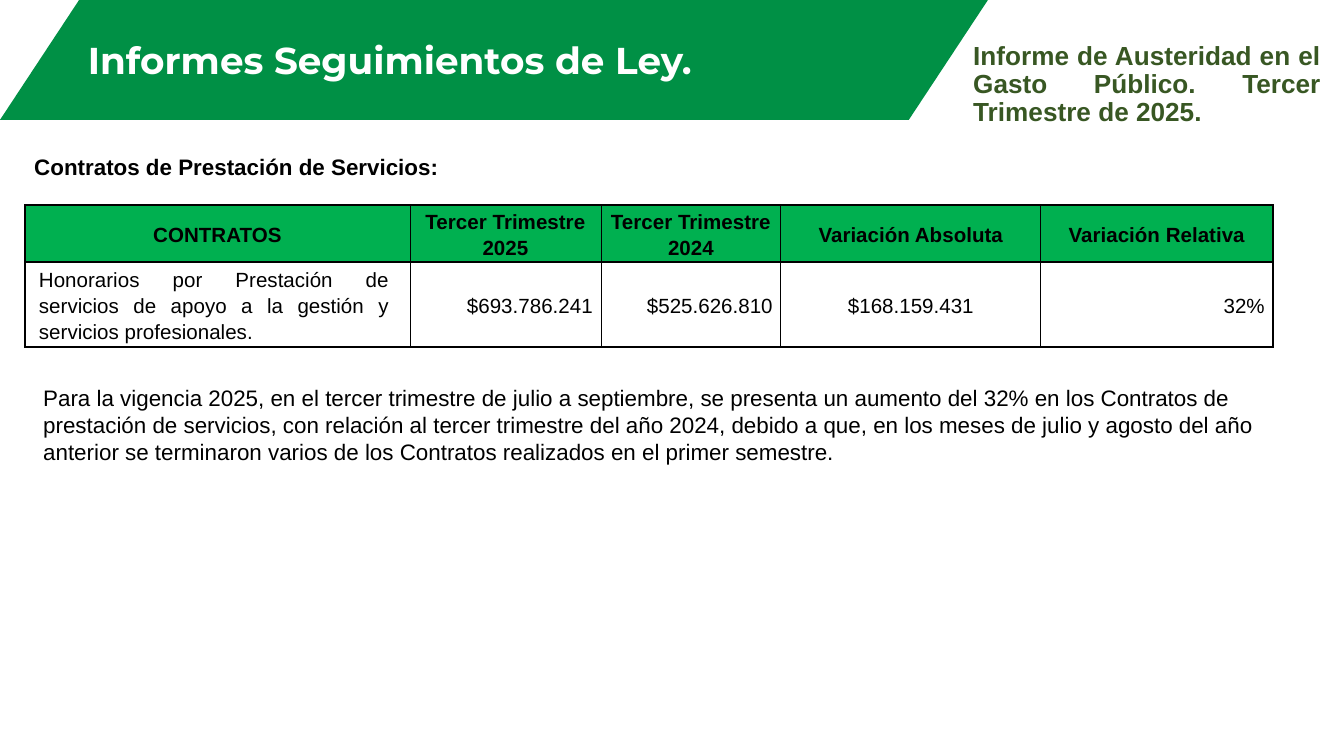
from lxml import etree
from pptx import Presentation
from pptx.dml.color import RGBColor
from pptx.enum.shapes import MSO_SHAPE
from pptx.enum.text import MSO_ANCHOR, PP_ALIGN
from pptx.oxml.ns import qn
from pptx.util import Emu, Pt

LEFT, CENTER, RIGHT, JUSTIFY = PP_ALIGN.LEFT, PP_ALIGN.CENTER, PP_ALIGN.RIGHT, PP_ALIGN.JUSTIFY
TOP, MIDDLE, BOTTOM = MSO_ANCHOR.TOP, MSO_ANCHOR.MIDDLE, MSO_ANCHOR.BOTTOM
PX = 914400 / 134.4


def px(*lengths):
    """Convert pixel lengths to a list of EMU lengths."""
    return [Emu(round(length * PX)) for length in lengths]


def write(frame, text, align, spacing, color, **font):
    """Put one formatted paragraph into a text frame."""
    frame.word_wrap = True
    para = frame.paragraphs[0]
    para.alignment, para.line_spacing = align, spacing
    span = para.add_run()
    span.text = text
    span.font.color.rgb = RGBColor.from_string(color)
    for name, value in font.items():
        setattr(span.font, name, value)


deck = Presentation()
deck.slide_width, deck.slide_height = px(1344, 756)
page = deck.slides.add_slide(deck.slide_layouts[5])

# Title on its green band
title = page.shapes.title
title.left, title.top, title.width, title.height = px(0, 31, 780, 58)
title.text_frame.vertical_anchor = BOTTOM
write(title.text_frame, "Informes Seguimientos de Ley.", CENTER, 0.9, "FFFFFF",
      name="Montserrat", size=Pt(20), bold=True)

band = page.shapes.add_shape(MSO_SHAPE.PARALLELOGRAM, *px(0, 0, 988, 120))
band.adjustments[0] = 0.66
band.shadow.inherit = False
band.fill.solid()
band.fill.fore_color.rgb = RGBColor.from_string("009045")
band.line.fill.background()
title.element.addprevious(band.element)

# Texts around the table
texts = [
    ((960, 36, 374, 100), "Informe de Austeridad en el Gasto Público. Tercer Trimestre de 2025.",
     JUSTIFY, 0.9, "385723", 14, True),
    ((21, 147, 448, 40), "Contratos de Prestación de Servicios:", LEFT, 1.0, "000000", 12, True),
    ((30, 378, 1268, 95),
     "Para la vigencia 2025, en el tercer trimestre de julio a septiembre, se presenta un aumento "
     "del 32% en los Contratos de prestación de servicios, con relación al tercer trimestre del "
     "año 2024, debido a que, en los meses de julio y agosto del año anterior se terminaron varios "
     "de los Contratos realizados en el primer semestre.", LEFT, 1.0, "000000", 12, False),
]
for place, text, align, spacing, color, size, bold in texts:
    box = page.shapes.add_textbox(*px(*place))
    write(box.text_frame, text, align, spacing, color, name="Arial", size=Pt(size), bold=bold)

# Contracts table
rows = [
    ["CONTRATOS", "Tercer Trimestre 2025", "Tercer Trimestre 2024",
     "Variación Absoluta", "Variación Relativa"],
    ["Honorarios por Prestación de servicios de apoyo a la gestión y servicios profesionales.",
     "$693.786.241", "$525.626.810", "$168.159.431", "32%"],
]
body_aligns = [JUSTIFY, RIGHT, RIGHT, CENTER, RIGHT]
widths, heights = [385, 191, 180, 260, 232], [57, 85]
last = len(widths) - 1
table = page.shapes.add_table(
    len(rows), len(widths), *px(25, 205, sum(widths), sum(heights))).table
table.first_row = table.horz_banding = False
for column, width in zip(table.columns, px(*widths)):
    column.width = width
for row, height in zip(table.rows, px(*heights)):
    row.height = height

for r, values in enumerate(rows):
    header = r == 0
    for c, value in enumerate(values):
        cell = table.cell(r, c)
        indented = not header and c == 0
        cell.margin_left, cell.margin_right, cell.margin_top, cell.margin_bottom = px(
            14 if indented else 8, 21 if indented else 8, 0, 0)
        cell.vertical_anchor = MIDDLE
        properties = cell._tc.get_or_add_tcPr()
        borders = {"a:lnL": 1 if c == 0 else 0.5, "a:lnR": 1 if c == last else 0.5,
                   "a:lnT": 1, "a:lnB": 1}
        for tag, weight in borders.items():
            line = etree.SubElement(properties, qn(tag), w=str(Pt(weight)))
            fill = etree.SubElement(line, qn("a:solidFill"))
            etree.SubElement(fill, qn("a:srgbClr"), val="000000")
        if header:
            cell.fill.solid()
            cell.fill.fore_color.rgb = RGBColor.from_string("00B050")
        else:
            cell.fill.background()
        write(cell.text_frame, value, CENTER if header else body_aligns[c], 1.15, "000000",
              name="Arial", size=Pt(11), bold=header)

deck.save("out.pptx")
